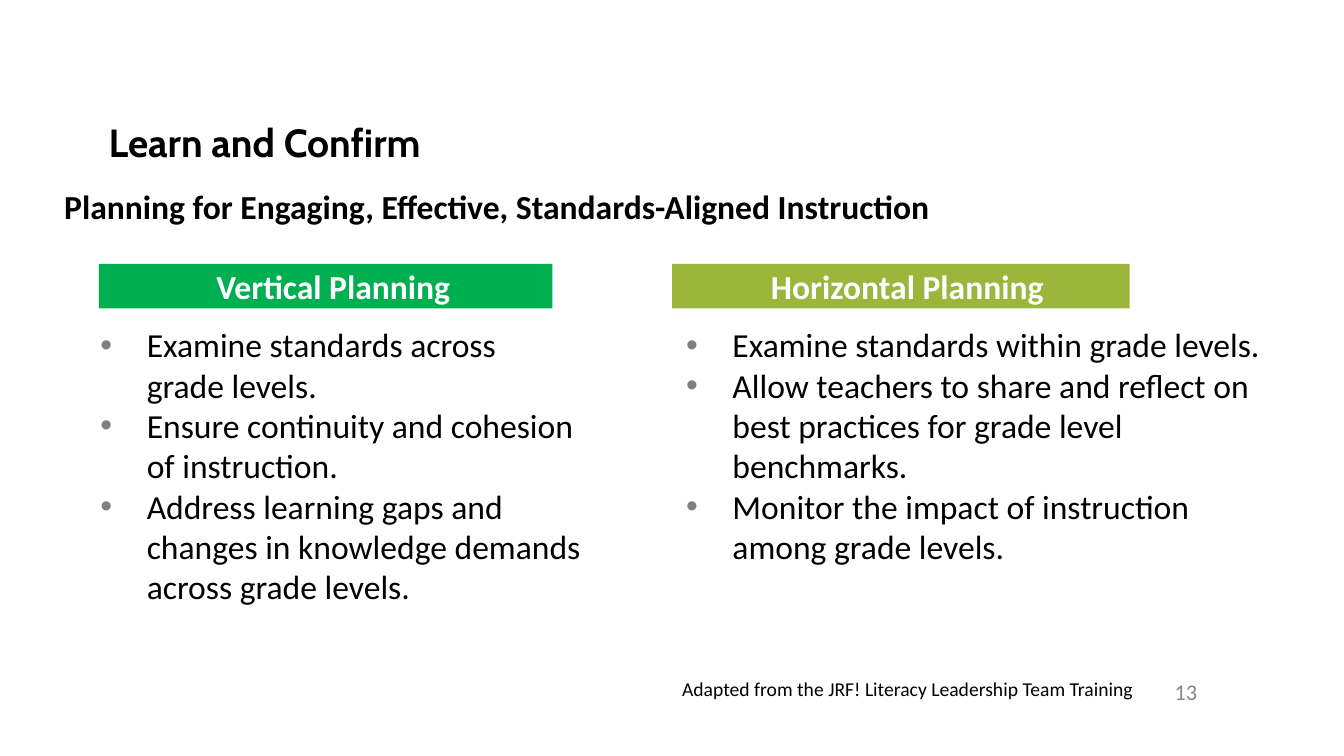
from lxml import etree
from pptx import Presentation
from pptx import util as u
from pptx.dml.color import RGBColor
from pptx.enum import shapes, text
from pptx.oxml import ns

BLACK = RGBColor(0x00, 0x00, 0x00)
WHITE = RGBColor(0xFF, 0xFF, 0xFF)
GREEN = RGBColor(0x00, 0xB0, 0x50)
OLIVE = RGBColor(0x9C, 0xB6, 0x3C)
NUMBER_GRAY = RGBColor(0x88, 0x88, 0x88)
BULLET_GRAY = "7F7F7F"

BODY = {"name": "Calibri", "size": u.Pt(24), "bold": False}
STRONG = {**BODY, "bold": True}
TITLE = {**STRONG, "name": "Cabin", "size": u.Pt(28)}
CREDIT = {**BODY, "size": u.Pt(14)}
NUMBER = {**BODY, "size": u.Pt(16)}

HEADING_TOP = 6.65
LIST_TOP = 8.05
LIST_HEIGHT = 7.21

VERTICAL = [
    "Examine standards across\ngrade levels.",
    "Ensure continuity and cohesion of instruction.",
    "Address learning gaps and changes in knowledge demands across grade levels.",
]
HORIZONTAL = [
    "Examine standards within grade levels.",
    "Allow teachers to share and reflect on best practices for grade level benchmarks.",
    "Monitor the impact of instruction among grade levels.",
]


def set_values(target, values):
    for key, value in values.items():
        setattr(target, key, value)


def write(para, words, style, color=BLACK):
    para.text = words
    for span in para.runs:
        set_values(span.font, style)
        span.font.color.rgb = color


def add_bullet(para):
    properties = para._p.get_or_add_pPr()
    properties.set("marL", str(u.Cm(1.27)))
    properties.set("indent", str(u.Cm(-1.17)))
    color = etree.SubElement(properties, ns.qn("a:buClr"))
    etree.SubElement(color, ns.qn("a:srgbClr"), val=BULLET_GRAY)
    etree.SubElement(properties, ns.qn("a:buFont"), typeface="Arial")
    etree.SubElement(properties, ns.qn("a:buChar"), char="•")


def add_box(page, place, **frame_values):
    box = page.shapes.add_textbox(*map(u.Cm, place))
    set_values(box.text_frame, {"word_wrap": True, **frame_values})
    return box.text_frame


def add_label(page, place, words, style, color=BLACK, align=text.PP_ALIGN.LEFT, **frame_values):
    para = add_box(page, place, **frame_values).paragraphs[0]
    para.alignment = align
    write(para, words, style, color)


def add_list(page, left, width, items):
    frame = add_box(page, (left, LIST_TOP, width, LIST_HEIGHT))
    for index, item in enumerate(items):
        para = frame.add_paragraph() if index else frame.paragraphs[0]
        add_bullet(para)
        write(para, item, BODY)


def add_heading(page, left, width, words, fill, inset):
    place = map(u.Cm, (left, HEADING_TOP, width, 1.12))
    bar = page.shapes.add_shape(shapes.MSO_SHAPE.RECTANGLE, *place)
    bar.shadow.inherit = False
    bar.fill.solid()
    bar.fill.fore_color.rgb = fill
    bar.line.fill.background()
    set_values(bar.text_frame, {
        "word_wrap": True,
        "vertical_anchor": text.MSO_ANCHOR.MIDDLE,
        "margin_left": u.Cm(inset),
    })
    para = bar.text_frame.paragraphs[0]
    para.alignment = text.PP_ALIGN.CENTER
    write(para, words, STRONG, WHITE)


def main():
    deck = Presentation()
    set_values(deck, {"slide_width": u.Cm(33.87), "slide_height": u.Cm(19.05)})
    page = deck.slides.add_slide(deck.slide_layouts[6])

    add_label(page, (2.49, 2.84, 9.91, 1.45), "Learn and Confirm", TITLE,
              vertical_anchor=text.MSO_ANCHOR.MIDDLE)
    add_label(page, (1.37, 4.57, 24.1, 1.27),
              "Planning for Engaging, Effective, Standards-Aligned Instruction", STRONG)

    add_heading(page, 2.49, 11.43, "Vertical Planning", GREEN, 0.64)
    add_list(page, 2.18, 13.36, VERTICAL)
    add_heading(page, 16.94, 11.53, "Horizontal Planning", OLIVE, 0.57)
    add_list(page, 16.94, 15.67, HORIZONTAL)

    add_label(page, (16.94, 16.94, 11.99, 0.86),
              "Adapted from the JRF! Literacy Leadership Team Training", CREDIT)
    add_label(page, (24.43, 17.04, 5.92, 0.76), "13", NUMBER, NUMBER_GRAY, text.PP_ALIGN.RIGHT,
              vertical_anchor=text.MSO_ANCHOR.MIDDLE, margin_left=u.Cm(0.18),
              margin_right=u.Cm(0.18), margin_top=u.Cm(0.1), margin_bottom=u.Cm(0.1))
    deck.save("out.pptx")


if __name__ == "__main__":
    main()
